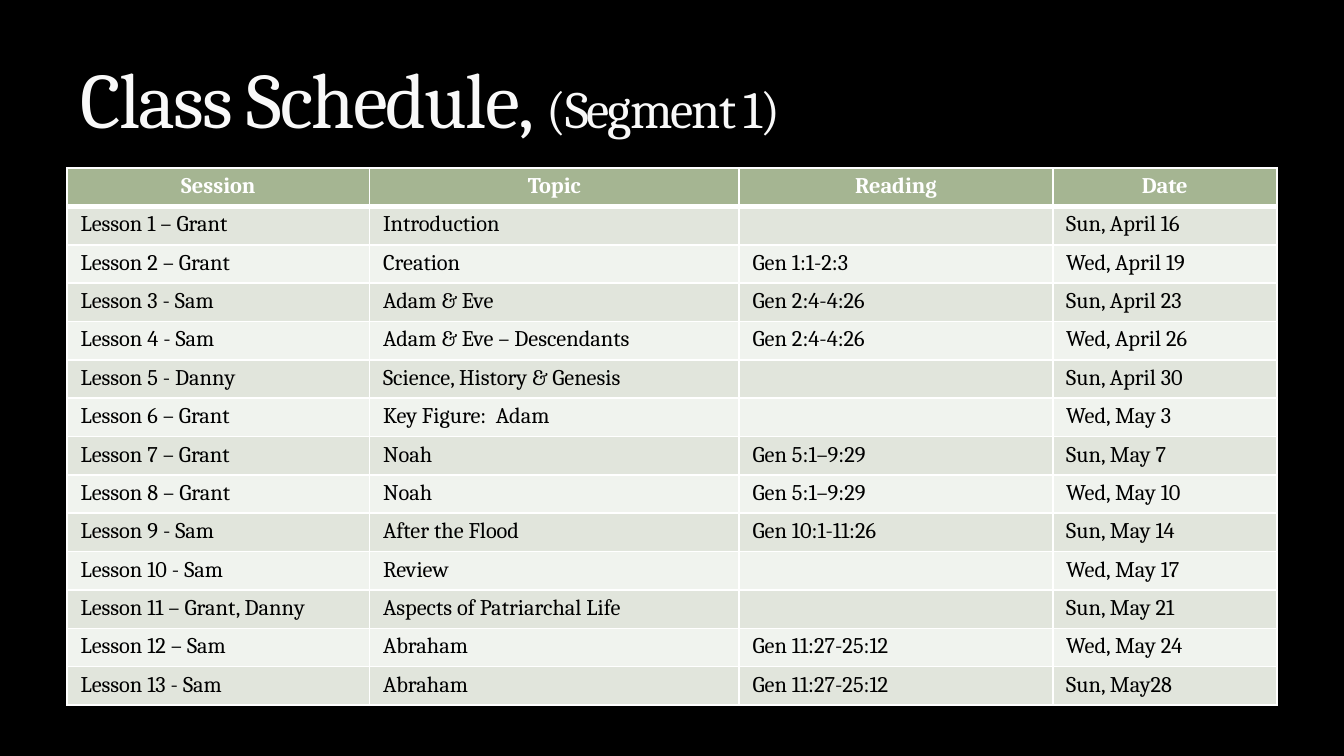
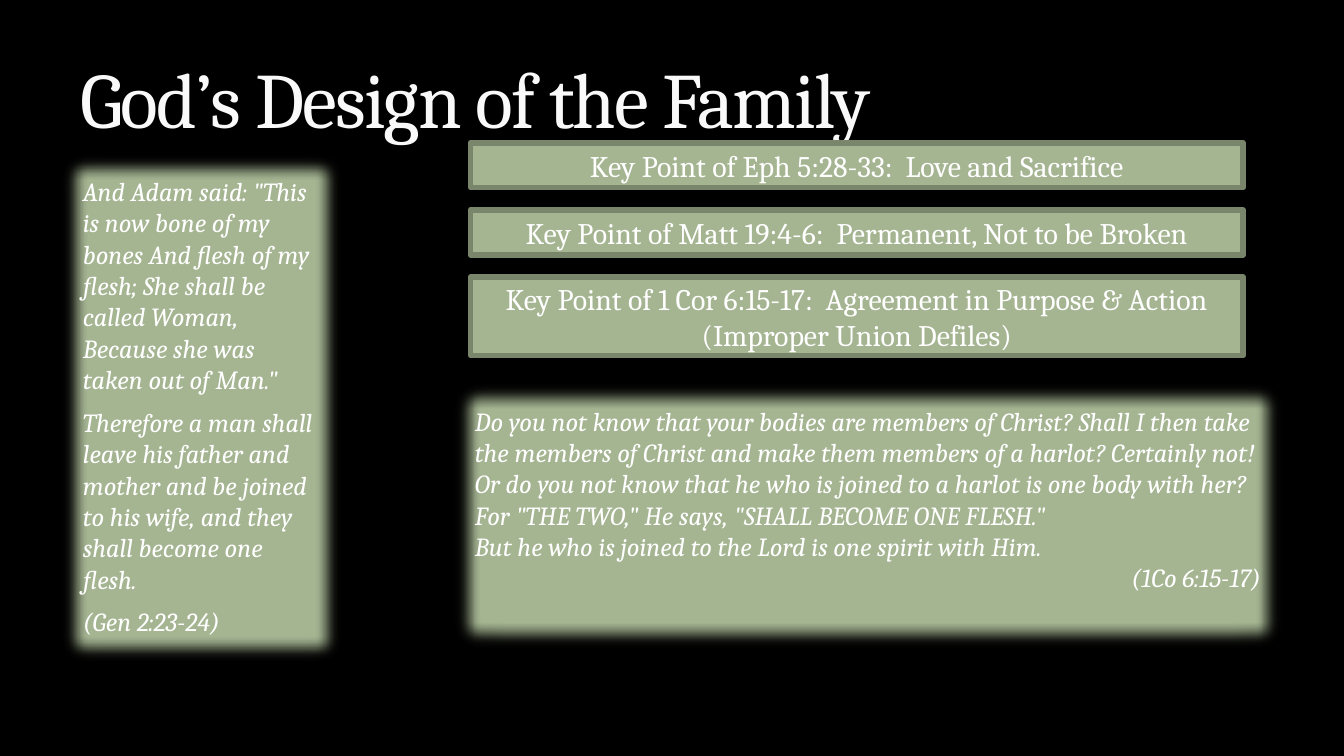
from lxml import etree
from pptx import Presentation
from pptx.dml.color import RGBColor
from pptx.enum.shapes import MSO_SHAPE
from pptx.enum.text import MSO_ANCHOR, PP_ALIGN
from pptx.oxml.ns import qn
from pptx.util import Inches, Pt

BLACK = RGBColor(0x00, 0x00, 0x00)
WHITE = RGBColor(0xFF, 0xFF, 0xFF)
PALE = RGBColor(0xF9, 0xF9, 0xF9)
SAGE = RGBColor(0xA5, 0xB5, 0x92)
MOSS = RGBColor(0x7A, 0x86, 0x6C)
BANDS = RGBColor(0xE1, 0xE5, 0xDC), RGBColor(0xF0, 0xF3, 0xEE)
RECT = MSO_SHAPE.RECTANGLE
LEFT, CENTER, RIGHT = PP_ALIGN.LEFT, PP_ALIGN.CENTER, PP_ALIGN.RIGHT
TOP, MIDDLE, BOTTOM = MSO_ANCHOR.TOP, MSO_ANCHOR.MIDDLE, MSO_ANCHOR.BOTTOM

COLS, ROWS = 120, 67.5
FACE = "Cambria"
SIDES = "left", "right", "top", "bottom"

HEADS = "Session", "Topic", "Reading", "Date"
WIDTHS = 27, 33, 28, 20
LESSONS = [
    ("Lesson 1 – Grant", "Introduction", "", "Sun, April 16"),
    ("Lesson 2 – Grant", "Creation", "Gen 1:1-2:3", "Wed, April 19"),
    ("Lesson 3 - Sam", "Adam & Eve", "Gen 2:4-4:26", "Sun, April 23"),
    ("Lesson 4 - Sam", "Adam & Eve – Descendants", "Gen 2:4-4:26", "Wed, April 26"),
    ("Lesson 5 - Danny", "Science, History & Genesis", "", "Sun, April 30"),
    ("Lesson 6 – Grant", "Key Figure:  Adam", "", "Wed, May 3"),
    ("Lesson 7 – Grant", "Noah", "Gen 5:1–9:29", "Sun, May 7"),
    ("Lesson 8 – Grant", "Noah", "Gen 5:1–9:29", "Wed, May 10"),
    ("Lesson 9 - Sam", "After the Flood", "Gen 10:1-11:26", "Sun, May 14"),
    ("Lesson 10 - Sam", "Review", "", "Wed, May 17"),
    ("Lesson 11 – Grant, Danny", "Aspects of Patriarchal Life", "", "Sun, May 21"),
    ("Lesson 12 – Sam", "Abraham", "Gen 11:27-25:12", "Wed, May 24"),
    ("Lesson 13 - Sam", "Abraham", "Gen 11:27-25:12", "Sun, May28"),
]

GENESIS = [
    'And Adam said: "This is now bone of my bones And flesh of my flesh; '
    'She shall be called Woman, Because she was taken out of Man."',
    "Therefore a man shall leave his father and mother and be joined to his wife, "
    "and they shall become one flesh.",
    "(Gen 2:23-24)",
]
CORINTH = [
    "Do you not know that your bodies are members of Christ? Shall I then take "
    "the members of Christ and make them members of a harlot? Certainly not!",
    "Or do you not know that he who is joined to a harlot is one body with her? "
    'For "THE TWO," He says, "SHALL BECOME ONE FLESH."',
    "But he who is joined to the Lord is one spirit with Him.",
    "(1Co 6:15-17)",
]
POINTS = [
    (4, ["Key Point of Eph 5:28-33:  Love and Sacrifice"]),
    (4, ["Key Point of Matt 19:4-6:  Permanent, Not to be Broken"]),
    (7, ["Key Point of 1 Cor 6:15-17:  Agreement in Purpose & Action",
         "(Improper Union Defiles)"]),
]


class Deck:
    """Holds the shared style and the current slide."""

    def __init__(self):
        self.show = Presentation()
        self.show.slide_width = Inches(10)
        self.show.slide_height = Inches(5.625)

    def x(self, cols):
        return round(self.show.slide_width * cols / COLS)

    def y(self, rows):
        return round(self.show.slide_height * rows / ROWS)

    def place(self, left, top, width, height):
        return self.x(left), self.y(top), self.x(width), self.y(height)

    def page(self):
        self.slide = self.show.slides.add_slide(self.show.slide_layouts[6])
        fill = self.slide.background.fill
        fill.solid()
        fill.fore_color.rgb = BLACK

    def words(self, para, text, size, color=WHITE, **style):
        run = para.add_run()
        run.text = text
        look = {"name": FACE, "size": Pt(size), **style}
        for key, value in look.items():
            setattr(run.font, key, value)
        run.font.color.rgb = color
        return run

    def fit(self, frame, anchor, inset=None):
        look = {"word_wrap": True, "vertical_anchor": anchor}
        if inset is not None:
            look.update({f"margin_{side}": Inches(inset) for side in SIDES})
        for key, value in look.items():
            setattr(frame, key, value)

    def title(self, text, note=""):
        frame = self.slide.shapes.add_textbox(*self.place(6, 1.5, 108, 12)).text_frame
        self.fit(frame, BOTTOM)
        para = frame.paragraphs[0]
        runs = [self.words(para, text, 42, PALE)]
        if note:
            runs.append(self.words(para, note, 28, PALE))
        for run in runs:
            run.font._element.set("spc", "-100")

    def box(self, spot, lines, size, align, anchor, inset=None, gap=0, **style):
        shape = self.slide.shapes.add_shape(RECT, *self.place(*spot))
        shape.shadow.inherit = False
        shape.fill.solid()
        shape.fill.fore_color.rgb = SAGE
        frame = shape.text_frame
        self.fit(frame, anchor, inset)
        for i, line in enumerate(lines):
            para = frame.add_paragraph() if i else frame.paragraphs[0]
            para.alignment = align
            para.space_before = Pt(gap if i else 0)
            self.words(para, line, size, **style)
        return shape

    def verse(self, spot, lines, gap=0):
        shape = self.box(spot, lines, 14, LEFT, TOP, 0.2, gap, italic=True)
        shape.line.fill.background()
        glow = shape._element.spPr.find(qn("a:effectLst"))
        etree.SubElement(glow, qn("a:softEdge"), rad="112500")
        return shape

    def point(self, spot, lines):
        shape = self.box(spot, lines, 16, CENTER, MIDDLE)
        shape.line.color.rgb = MOSS
        shape.line.width = Pt(3)

    def edge(self, cell, head):
        props = cell._tc.get_or_add_tcPr()
        for i, side in enumerate("LRTB"):
            width = Pt(3 if head and side == "B" else 1)
            line = etree.Element(qn(f"a:ln{side}"), w=str(int(width)))
            fill = etree.SubElement(line, qn("a:solidFill"))
            etree.SubElement(fill, qn("a:srgbClr"), val=str(WHITE))
            props.insert(i, line)

    def cell(self, cell, text, row):
        head = row == 0
        cell.fill.solid()
        cell.fill.fore_color.rgb = SAGE if head else BANDS[(row - 1) % 2]
        cell.margin_top = cell.margin_bottom = Inches(0.04)
        para = cell.text_frame.paragraphs[0]
        para.alignment = CENTER if head else LEFT
        if text:
            self.words(para, text, 12, WHITE if head else BLACK, bold=head)
        else:
            etree.SubElement(para._p, qn("a:endParaRPr"), sz="1200")
        self.edge(cell, head)

    def table(self, spot, widths, rows):
        size = len(rows), len(widths)
        table = self.slide.shapes.add_table(*size, *self.place(*spot)).table
        for col, width in zip(table.columns, widths):
            col.width = self.x(width)
        for r, row in enumerate(rows):
            table.rows[r].height = self.y(spot[3] / len(rows))
            for c, text in enumerate(row):
                self.cell(table.cell(r, c), text, r)


def main():
    deck = Deck()

    deck.page()
    deck.table((6, 15, sum(WIDTHS), 48), WIDTHS, [HEADS, *LESSONS])
    deck.title("Class Schedule, ", "(Segment 1)")

    deck.page()
    deck.verse((5, 13.25, 26, 46.4), GENESIS, 6)
    deck.title("God’s Design of the Family")
    quote = deck.verse((40, 33.75, 75, 24.6), CORINTH)
    quote.text_frame.paragraphs[-1].alignment = RIGHT
    for i, (tall, lines) in enumerate(POINTS):
        deck.point((42, 12.75 + 6 * i, 69, tall), lines)

    deck.show.save("out.pptx")


if __name__ == "__main__":
    main()
